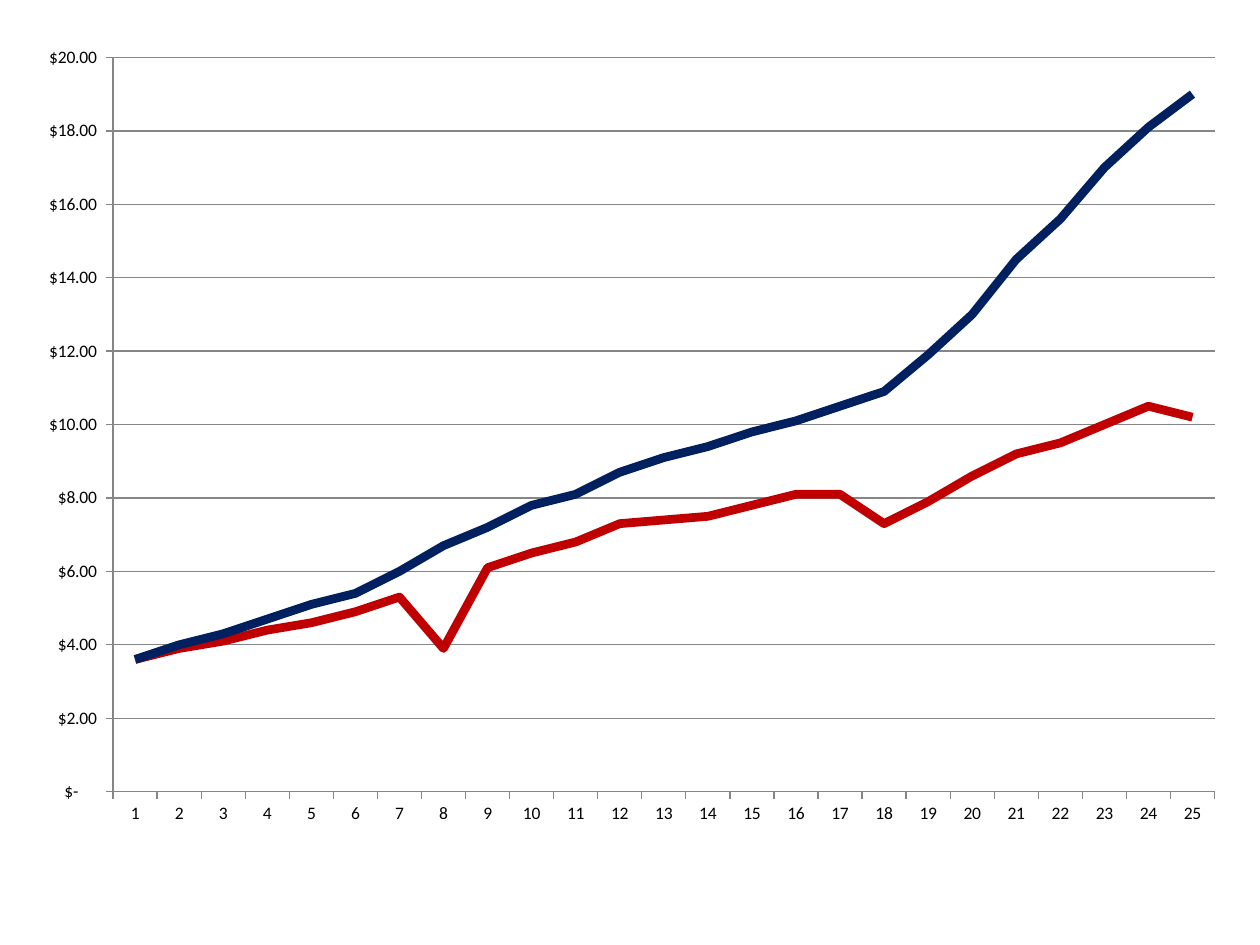
from pptx import Presentation
from pptx.chart.data import CategoryChartData
from pptx.dml.color import RGBColor
from pptx.enum.chart import XL_CHART_TYPE, XL_TICK_MARK
from pptx.util import Pt


def paint(line, color, width):
    line.color.rgb = RGBColor.from_string(color)
    line.width = Pt(width)


deck = Presentation()
deck.slide_width, deck.slide_height = Pt(720), Pt(540)
slide = deck.slides.add_slide(deck.slide_layouts[6])

# Values of the two lines, with their colours
lines = [
    ("Series 1", "C00000",
     [3.6, 3.9, 4.1, 4.4, 4.6, 4.9, 5.3, 3.9, 6.1, 6.5, 6.8, 7.3, 7.4,
      7.5, 7.8, 8.1, 8.1, 7.3, 7.9, 8.6, 9.2, 9.5, 10, 10.5, 10.2]),
    ("Series 2", "002060",
     [3.6, 4, 4.3, 4.7, 5.1, 5.4, 6, 6.7, 7.2, 7.8, 8.1, 8.7, 9.1,
      9.4, 9.8, 10.1, 10.5, 10.9, 11.9, 13, 14.5, 15.6, 17, 18.1, 19]),
]
data = CategoryChartData()
data.categories = [str(year) for year in range(1, 26)]
for name, color, vals in lines:
    data.add_series(name, vals)

# Line chart
chart = slide.shapes.add_chart(
    XL_CHART_TYPE.LINE, Pt(12), Pt(18), Pt(696), Pt(462), data).chart
chart.has_legend = chart.has_title = False
font = {"name": "Calibri", "size": Pt(10)}
for key, val in font.items():
    setattr(chart.font, key, val)
chart.font.color.rgb = RGBColor.from_string("000000")

for series, (name, color, vals) in zip(chart.plots[0].series, lines):
    series.smooth = False
    paint(series.format.line, color, 5)

# Axes and grid
scale = {"minimum_scale": 0, "maximum_scale": 20, "major_unit": 2,
         "has_major_gridlines": True}
for key, val in scale.items():
    setattr(chart.value_axis, key, val)
paint(chart.value_axis.major_gridlines.format.line, "868686", 0.75)
for axis in (chart.category_axis, chart.value_axis):
    axis.major_tick_mark = XL_TICK_MARK.OUTSIDE
    axis.minor_tick_mark = XL_TICK_MARK.NONE
    paint(axis.format.line, "868686", 0.75)

# Dollar amounts, with a dash for zero
labels = chart.value_axis.tick_labels
labels.number_format = ('_("$"* #,##0.00_);_("$"* \\(#,##0.00\\);'
                        '_("$"* "-"??_);_(@_)')
labels.number_format_is_linked = False

deck.save("out.pptx")
